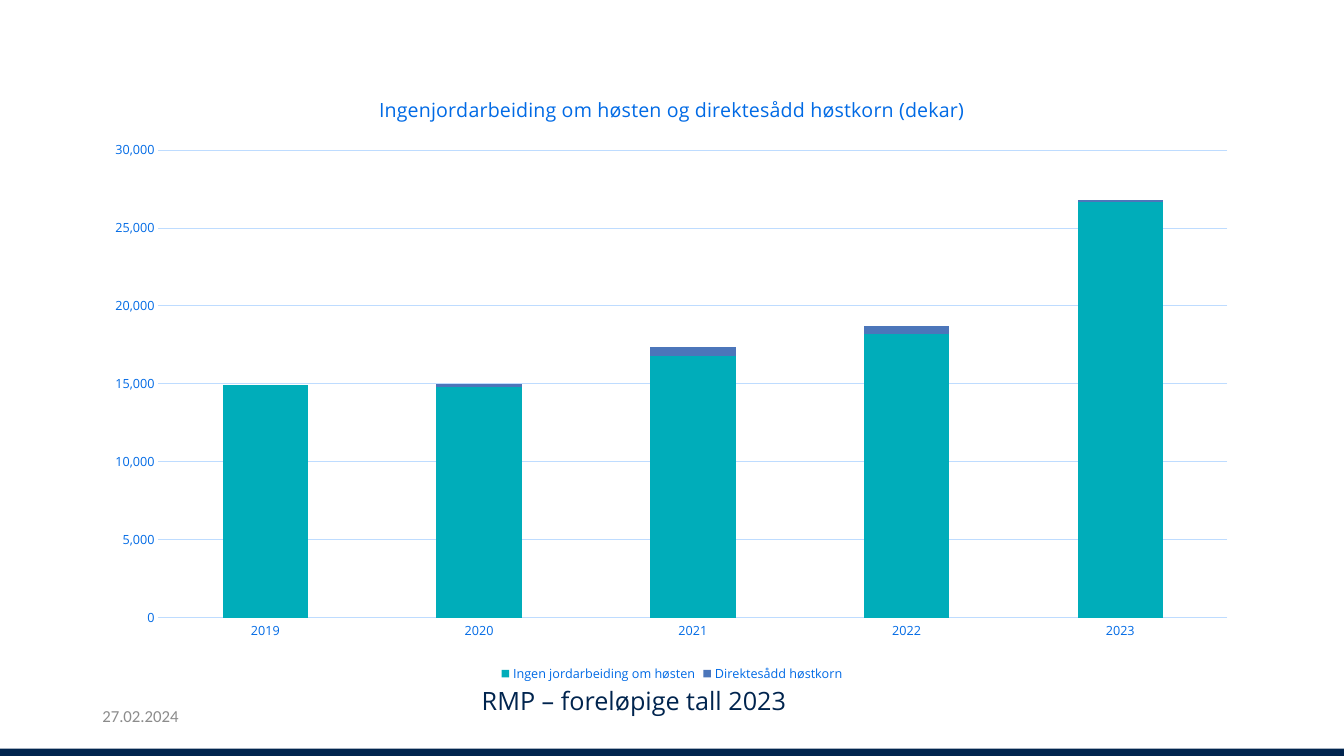
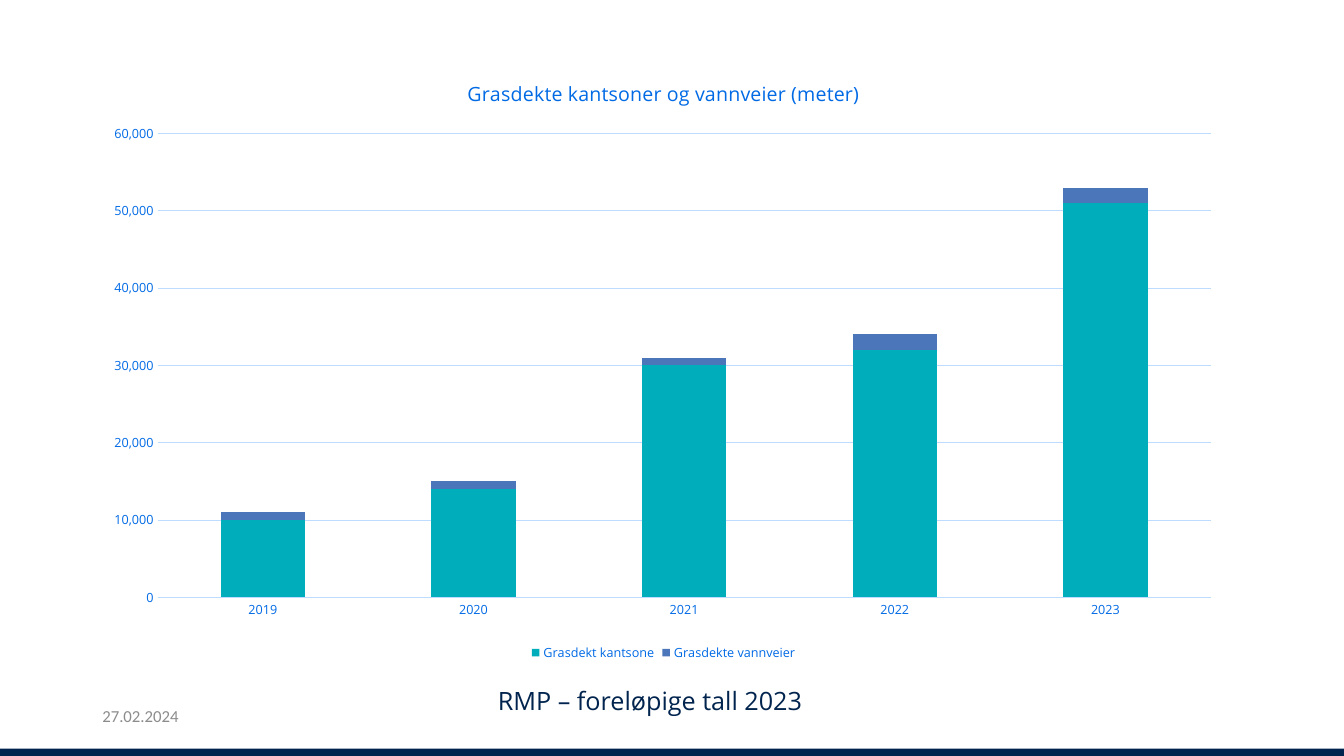
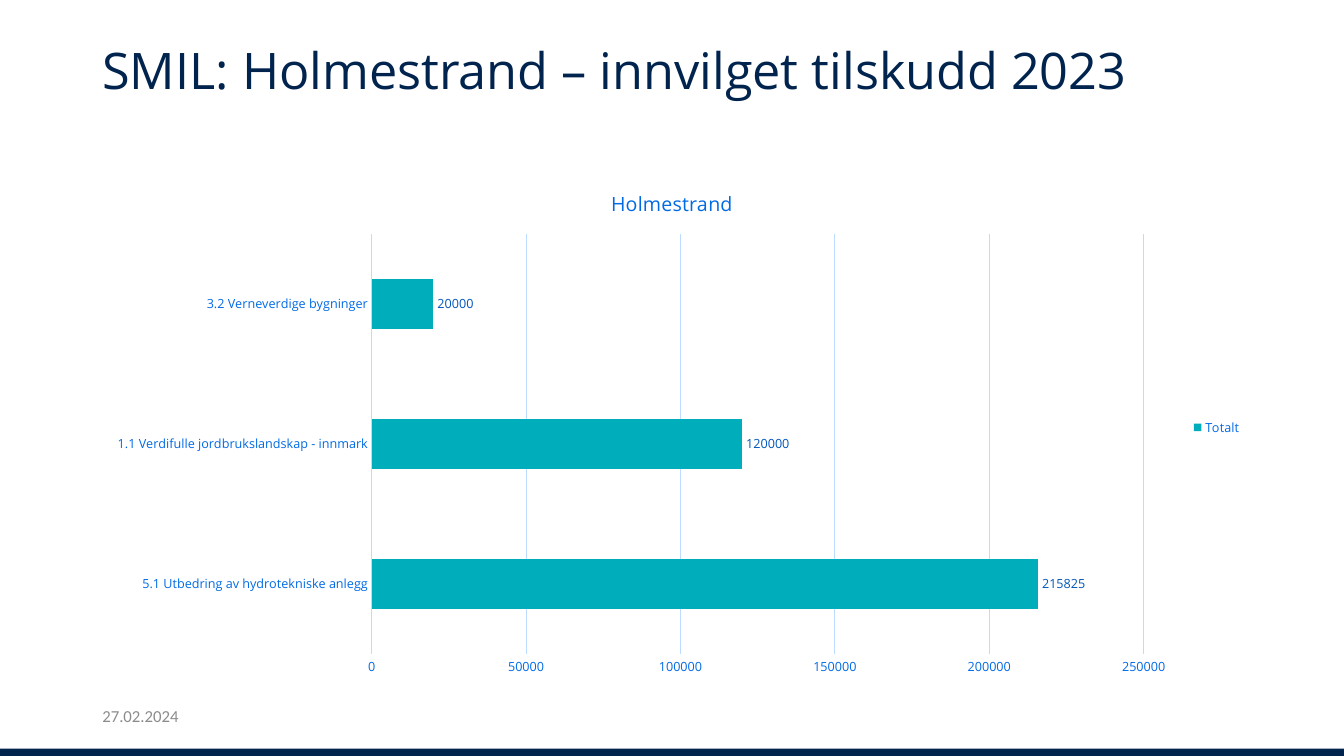
import pptx
import pptx.chart.data
import pptx.dml.color
import pptx.enum.chart
import pptx.enum.shapes
import pptx.oxml
import pptx.oxml.ns
import pptx.util

Pt = pptx.util.Pt
chart_types = pptx.enum.chart.XL_CHART_TYPE
legend_positions = pptx.enum.chart.XL_LEGEND_POSITION

# Shared style
NAVY, BLUE, PALE, GREY = "00244E", "006AE5", "BEDCFF", "8C8C8C"
SERIES_COLOURS = ["00ADBA", "4C76BA"]
LABEL_BLUE = "0056BA"
FONT = "Open Sans"
MARGIN = 66
YEARS = ["2019", "2020", "2021", "2022", "2023"]
CAPTION = "RMP – foreløpige tall 2023"


def style(font, size, colour, name=FONT):
    font.size = Pt(size)
    font.bold = False
    font.name = name
    font.color.rgb = pptx.dml.color.RGBColor.from_string(colour)


def add_text(slide, text, box, size, colour, name=FONT, wrap=True):
    shape = slide.shapes.add_textbox(*[Pt(value) for value in box])
    shape.text_frame.word_wrap = wrap
    shape.text_frame.text = text
    paragraph = shape.text_frame.paragraphs[0]
    style(paragraph.runs[0].font, size, colour, name)
    return paragraph


# Contents: boxes in points, plot areas in percent of the chart
stacked = {
    "type": chart_types.COLUMN_STACKED, "legend": legend_positions.BOTTOM,
    "categories": YEARS, "gap": 150, "overlap": 100, "format": "#,##0",
    "plot": (5.7, 12.6, 92.2, 76.2),
}
slides = [
    {**stacked, "caption_left": 337, "box": (MARGIN, 52, 828, 438.5),
     "title": "Ingenjordarbeiding om høsten og direktesådd høstkorn (dekar)",
     "maximum": 30000, "step": 5000,
     "series": {"Ingen jordarbeiding om høsten": [14900, 14800, 16800, 18200, 26700],
                "Direktesådd høstkorn": [0, 200, 600, 500, 100]}},
    {**stacked, "caption_left": 348.5, "box": (MARGIN, 40.5, 816, 435),
     "title": "Grasdekte kantsoner og vannveier (meter)",
     "maximum": 60000, "step": 10000,
     "series": {"Grasdekt kantsone": [10000, 14000, 30000, 32000, 51000],
                "Grasdekte vannveier": [1000, 1000, 1000, 2000, 2000]}},
    {"heading": "SMIL: Holmestrand – innvilget tilskudd 2023",
     "type": chart_types.BAR_CLUSTERED, "legend": legend_positions.RIGHT,
     "categories": ["5.1 Utbedring av hydrotekniske anlegg",
                    "1.1 Verdifulle jordbrukslandskap - innmark",
                    "3.2 Verneverdige bygninger"],
     "gap": 182, "overlap": 0, "format": "General",
     "plot": (24.1, 12.5, 66.6, 81.4), "box": (MARGIN, 121, 828, 368.5),
     "title": "Holmestrand", "maximum": 250000, "step": 50000,
     "series": {"Totalt": [215825, 120000, 20000]}},
]

presentation = pptx.Presentation()
presentation.slide_width = Pt(960)
presentation.slide_height = Pt(540)

for content in slides:
    slide = presentation.slides.add_slide(presentation.slide_layouts[6])

    # Bottom band and date
    band = slide.shapes.add_shape(
        pptx.enum.shapes.MSO_SHAPE.RECTANGLE, 0, Pt(534.8), Pt(960), Pt(5.2))
    band.shadow.inherit = False
    band.fill.solid()
    band.fill.fore_color.rgb = pptx.dml.color.RGBColor.from_string(NAVY)
    band.line.fill.background()
    add_text(slide, "27.02.2024", (MARGIN, 500.5, 216, 28.8), 12, GREY, "Calibri")

    # Heading above the chart or caption below it
    if "heading" in content:
        heading = add_text(slide, content["heading"], (MARGIN, 29.5, 818, 104), 36, NAVY)
        heading.line_spacing = 0.9
    else:
        add_text(slide, CAPTION, (content["caption_left"], 486, 234, 29), 18, NAVY, wrap=False)

    # Chart
    chart_data = pptx.chart.data.CategoryChartData(number_format=content["format"])
    chart_data.categories = content["categories"]
    for name, values in content["series"].items():
        chart_data.add_series(name, values)
    chart = slide.shapes.add_chart(
        content["type"], *[Pt(value) for value in content["box"]], chart_data).chart
    style(chart.font, 10, NAVY)
    chart.chart_title.text_frame.text = content["title"]
    style(chart.chart_title.text_frame.paragraphs[0].runs[0].font, 14, BLUE)
    chart.chart_title.include_in_layout = False
    chart.has_legend = True
    chart.legend.position = content["legend"]
    chart.legend.include_in_layout = False
    style(chart.legend.font, 9, BLUE)

    # Axes
    for axis in (chart.category_axis, chart.value_axis):
        axis.major_tick_mark = axis.minor_tick_mark = pptx.enum.chart.XL_TICK_MARK.NONE
        style(axis.tick_labels.font, 9, BLUE)
    value_axis = chart.value_axis
    value_axis.minimum_scale = 0
    value_axis.maximum_scale = content["maximum"]
    value_axis.major_unit = content["step"]
    value_axis.tick_labels.number_format = content["format"]
    value_axis.tick_labels.number_format_is_linked = False
    value_axis.format.line.fill.background()
    for line in (chart.category_axis.format.line, value_axis.major_gridlines.format.line):
        line.width = Pt(0.75)
        line.color.rgb = pptx.dml.color.RGBColor.from_string(PALE)

    # Bars
    plot = chart.plots[0]
    plot.gap_width = content["gap"]
    plot.overlap = content["overlap"]
    plot.vary_by_categories = False
    for series, colour in zip(plot.series, SERIES_COLOURS):
        series.format.fill.solid()
        series.format.fill.fore_color.rgb = pptx.dml.color.RGBColor.from_string(colour)
        series.invert_if_negative = False
    if "heading" in content:
        labels = plot.series[0].data_labels
        labels.show_value = True
        labels.position = pptx.enum.chart.XL_LABEL_POSITION.OUTSIDE_END
        style(labels.font, 9, LABEL_BLUE)

    # Fixed inner plot area
    left, top, width, height = [percent / 100 for percent in content["plot"]]
    layout = pptx.oxml.parse_xml(
        f'<c:layout {pptx.oxml.ns.nsdecls("c")}><c:manualLayout>'
        '<c:layoutTarget val="inner"/><c:xMode val="edge"/><c:yMode val="edge"/>'
        f'<c:x val="{left}"/><c:y val="{top}"/><c:w val="{width}"/><c:h val="{height}"/>'
        '</c:manualLayout></c:layout>')
    plot_area = chart.element.chart.plotArea
    for old_layout in plot_area.findall(pptx.oxml.ns.qn("c:layout")):
        plot_area.remove(old_layout)
    plot_area.insert(0, layout)

presentation.save("out.pptx")
